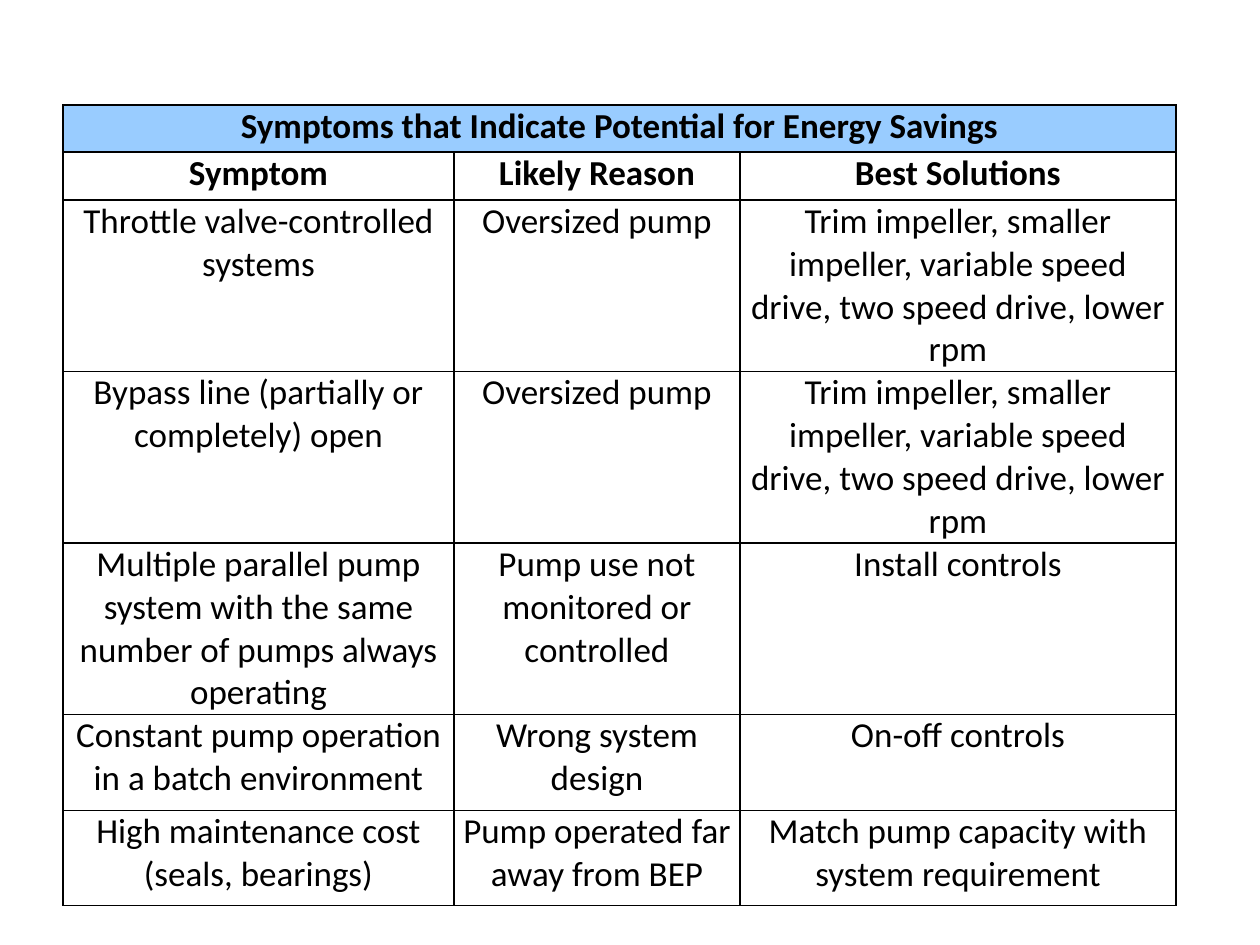
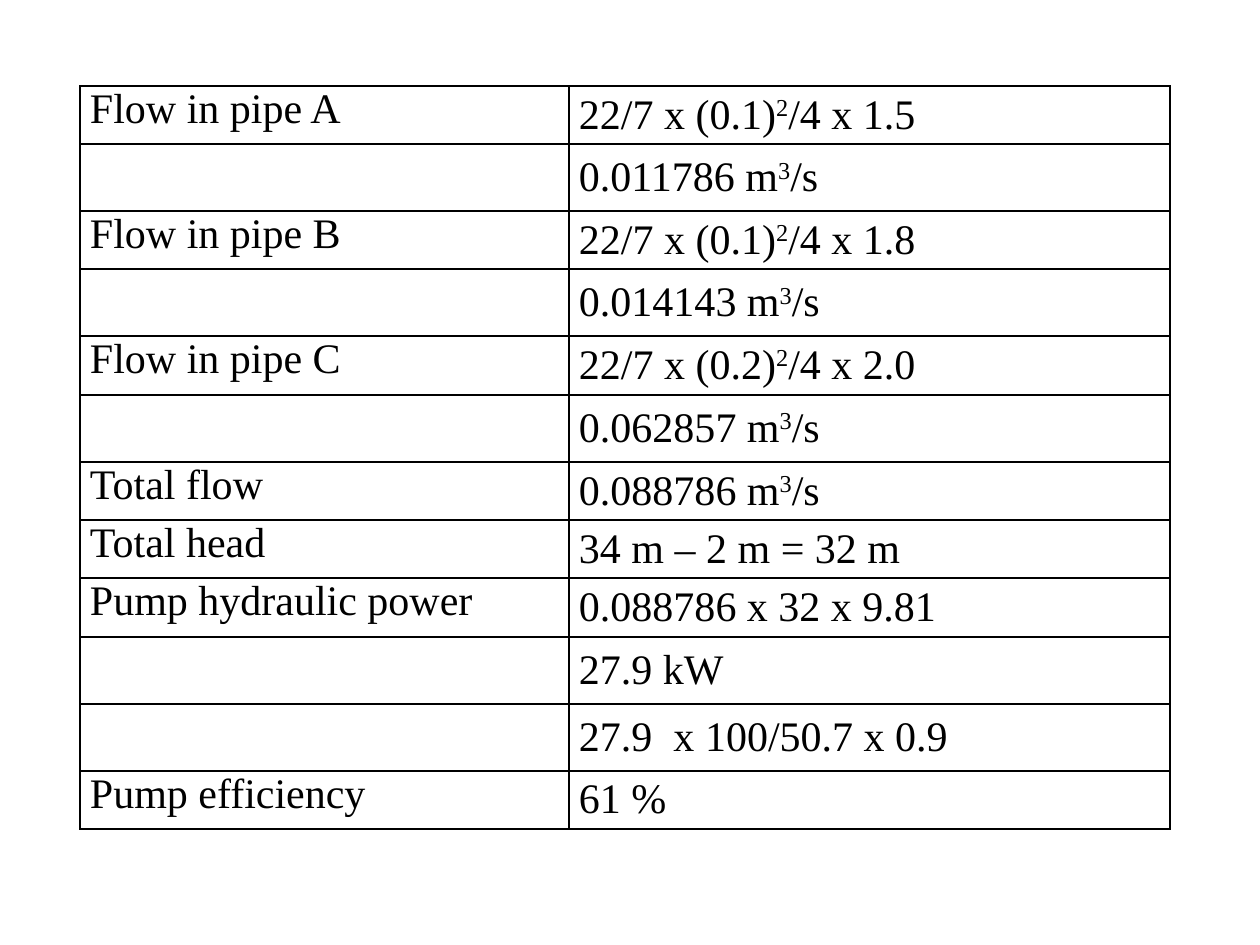
from lxml import etree
from pptx import Presentation
from pptx import util as u
from pptx.dml.color import RGBColor
from pptx.enum import text as t
from pptx.oxml import ns

PX_PER_INCH = 126
COLORS = {"ink": "000000", "band": "99CCFF"}
BLANK_LAYOUT = 6

SYMPTOMS_BOX = (63, 105)
SYMPTOMS_COLS = [391, 286, 436]
SYMPTOMS_ROWS = [47, 48, 168, 168, 168, 96, 95]
OVERSIZED = ("Oversized pump", "Trim impeller, smaller impeller, variable speed drive, "
             "two speed drive, lower rpm")
SYMPTOMS = [
    ("Symptoms that Indicate Potential for Energy Savings", "", ""),
    ("Symptom", "Likely Reason", "Best Solutions"),
    ("Throttle valve-controlled systems", *OVERSIZED),
    ("Bypass line (partially or completely) open", *OVERSIZED),
    ("Multiple parallel pump system with the same number of pumps always operating",
     "Pump use not monitored or controlled", "Install controls"),
    ("Constant pump operation in a batch environment", "Wrong system design",
     "On-off controls"),
    ("High maintenance cost (seals, bearings)", "Pump operated far away from BEP",
     "Match pump capacity with system requirement"),
]

EFFICIENCY_BOX = (80, 86)
EFFICIENCY_COLS = [489, 601]
EFFICIENCY_ROWS = [58, 67, 58, 67, 59, 67, 58, 58, 59, 67, 67, 58]
# A caret raises the character after it
EFFICIENCY = [
    ("Flow in pipe A", "22/7 x (0.1)^2/4 x 1.5"),
    ("", "0.011786 m^3/s"),
    ("Flow in pipe B", "22/7 x (0.1)^2/4 x 1.8"),
    ("", "0.014143 m^3/s"),
    ("Flow in pipe C", "22/7 x (0.2)^2/4 x 2.0"),
    ("", "0.062857 m^3/s"),
    ("Total flow", "0.088786 m^3/s"),
    ("Total head", "34 m – 2 m = 32 m"),
    ("Pump hydraulic power", "0.088786 x 32 x 9.81"),
    ("", "27.9 kW"),
    ("", "27.9  x 100/50.7 x 0.9"),
    ("Pump efficiency", "61 %"),
]


def px(length):
    return u.Emu(round(length * 914400 / PX_PER_INCH))


def write(frame, wording, *, font, size, bold=False, align=t.PP_ALIGN.LEFT, gap=0):
    paragraph = frame.paragraphs[0]
    paragraph.alignment = align
    paragraph.space_before = paragraph.space_after = u.Pt(gap)
    plain, *raised = wording.split("^")
    pieces = [(plain, False)]
    for piece in raised:
        pieces += [(piece[0], True), (piece[1:], False)]
    for piece, is_raised in pieces:
        run = paragraph.add_run()
        run.text = piece
        run.font.name, run.font.size, run.font.bold = font, u.Pt(size), bold
        run.font.color.rgb = RGBColor.from_string(COLORS["ink"])
        if is_raised:
            run.font._element.set("baseline", "30000")


def outline(cell, width=1):
    properties = cell._tc.get_or_add_tcPr()
    for side in ("a:lnL", "a:lnR", "a:lnT", "a:lnB"):
        line = etree.SubElement(properties, ns.qn(side), w=str(u.Pt(width)))
        fill = etree.SubElement(line, ns.qn("a:solidFill"))
        etree.SubElement(fill, ns.qn("a:srgbClr"), val=COLORS["ink"])


def add_grid(slide, box, cols, rows, margin):
    """Add an unfilled ruled table with its corner at box."""
    left, top = box
    grid = slide.shapes.add_table(len(rows), len(cols), px(left), px(top),
                                  px(sum(cols)), px(sum(rows))).table
    grid.first_row = grid.horz_banding = False
    for column, width in zip(grid.columns, cols):
        column.width = px(width)
    for row, height in zip(grid.rows, rows):
        row.height = px(height)
    for cell in grid.iter_cells():
        cell.margin_left = cell.margin_right = px(margin)
        cell.margin_top = cell.margin_bottom = 0
        outline(cell)
        cell.fill.background()
    return grid


def symptoms_slide(slide):
    grid = add_grid(slide, SYMPTOMS_BOX, SYMPTOMS_COLS, SYMPTOMS_ROWS, margin=9)
    # Heading band across all columns
    band = grid.cell(0, 0)
    band.merge(grid.cell(0, 2))
    band.fill.solid()
    band.fill.fore_color.rgb = RGBColor.from_string(COLORS["band"])
    for r, entries in enumerate(SYMPTOMS):
        for c, entry in enumerate(entries):
            if entry:
                write(grid.cell(r, c).text_frame, entry, font="Calibri", size=20,
                      bold=r < 2, align=t.PP_ALIGN.CENTER, gap=6)


def efficiency_slide(slide):
    grid = add_grid(slide, EFFICIENCY_BOX, EFFICIENCY_COLS, EFFICIENCY_ROWS, margin=10)
    for r, entries in enumerate(EFFICIENCY):
        grid.cell(r, 1).vertical_anchor = t.MSO_ANCHOR.MIDDLE
        for c, entry in enumerate(entries):
            if entry:
                write(grid.cell(r, c).text_frame, entry, font="Times New Roman", size=24)


def main():
    deck = Presentation()
    deck.slide_width, deck.slide_height = u.Inches(10), u.Inches(7.5)
    for build in (symptoms_slide, efficiency_slide):
        build(deck.slides.add_slide(deck.slide_layouts[BLANK_LAYOUT]))
    deck.save("out.pptx")


if __name__ == "__main__":
    main()
